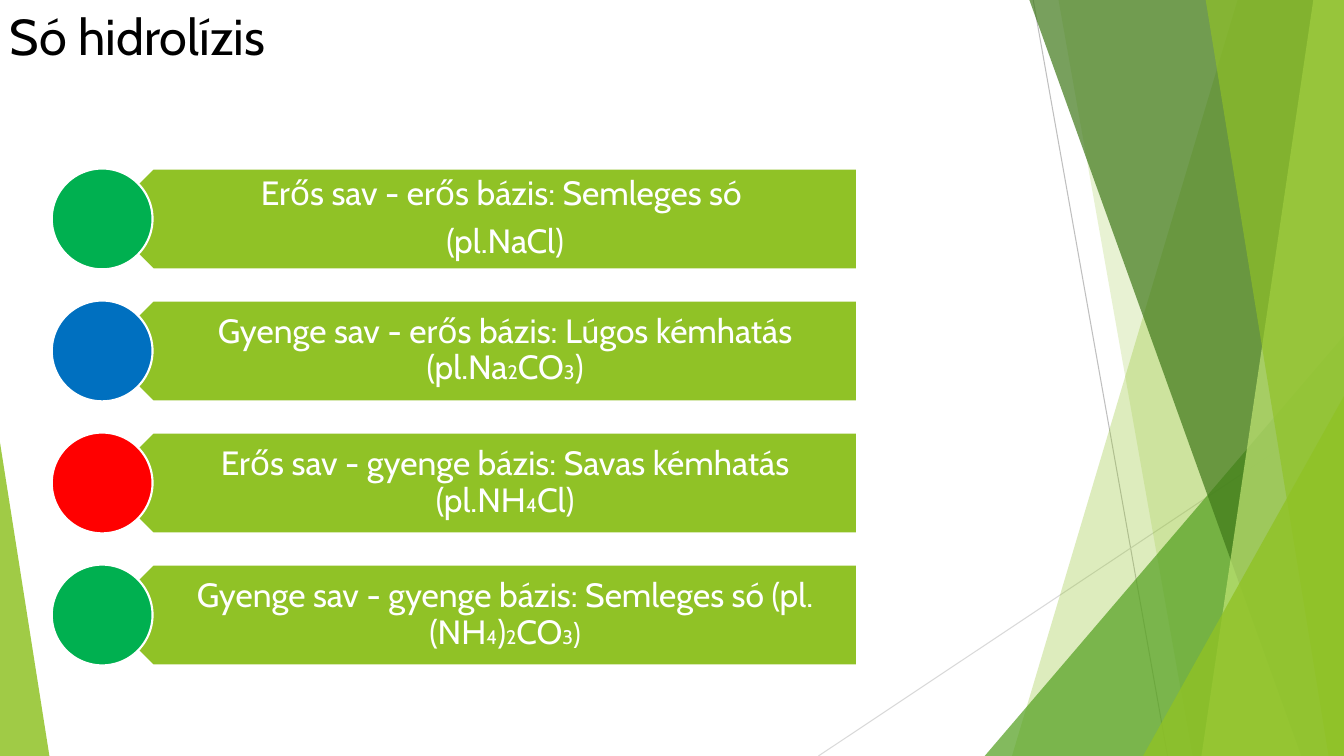
from lxml import etree
from pptx import Presentation
from pptx.dml.color import RGBColor
from pptx.enum.shapes import MSO_CONNECTOR, MSO_SHAPE
from pptx.enum.text import MSO_ANCHOR, PP_ALIGN
from pptx.oxml.ns import qn
from pptx.util import Pt

LINE = MSO_CONNECTOR.STRAIGHT
PLATE, OVAL, TRI = MSO_SHAPE.PENTAGON, MSO_SHAPE.OVAL, MSO_SHAPE.ISOSCELES_TRIANGLE
TOP, MID = MSO_ANCHOR.TOP, MSO_ANCHOR.MIDDLE
LEFT, MIDDLE = PP_ALIGN.LEFT, PP_ALIGN.CENTER
BLACK, WHITE = RGBColor(0, 0, 0), RGBColor(255, 255, 255)
LIME, LEAF = RGBColor(0x90, 0xC2, 0x26), RGBColor(0x54, 0xA0, 0x21)
MOSS, PALE = RGBColor(0x3F, 0x78, 0x19), RGBColor(0xC0, 0xE4, 0x74)
GREEN, BLUE = RGBColor(0, 0xB0, 0x50), RGBColor(0, 0x70, 0xC0)
RED = RGBColor(255, 0, 0)
GRAY, MIST = RGBColor(0xBF, 0xBF, 0xBF), RGBColor(0xD9, 0xD9, 0xD9)
WIDE, HIGH = 960, 540


class Deck:
    """Draws styled elements on one slide, with lengths in points."""

    font = "Cabin"
    small = 14

    def __init__(self):
        self.show = Presentation()
        self.show.slide_width, self.show.slide_height = Pt(WIDE), Pt(HIGH)
        self.slide = self.show.slides.add_slide(self.show.slide_layouts[6])
        self.shapes = self.slide.shapes

    def paint(self, shape, color, alpha=100, edge=None):
        shape.shadow.inherit = False
        shape.fill.solid()
        shape.fill.fore_color.rgb = color
        if alpha < 100:
            tone = shape.fill._xPr.find(".//" + qn("a:srgbClr"))
            etree.SubElement(tone, qn("a:alpha"), val=str(alpha * 1000))
        if edge is None:
            shape.line.fill.background()
        else:
            shape.line.color.rgb = edge
            shape.line.width = Pt(1.5)

    def line(self, start, end, color):
        wire = self.shapes.add_connector(LINE, *map(Pt, start + end))
        wire.line.color.rgb = color
        wire.line.width = Pt(0.75)
        etree.SubElement(wire._element.spPr, qn("a:effectLst"))

    def band(self, top, base, color, alpha):
        rim = -0.6
        form = self.shapes.build_freeform(Pt(top), Pt(rim))
        ends = [(WIDE, rim), (WIDE, HIGH), (base, HIGH)]
        form.add_line_segments([(Pt(x), Pt(y)) for x, y in ends])
        self.paint(form.convert_to_shape(), color, alpha)

    def shape(self, kind, box, color, turn=0, tip=None, **look):
        item = self.shapes.add_shape(kind, *map(Pt, box))
        item.rotation = turn
        if tip is not None:
            item.adjustments[0] = tip
        self.paint(item, color, **look)

    def text(self, box, lines, size, color, last=None, frame=None, para=None):
        body = self.shapes.add_textbox(*map(Pt, box)).text_frame
        for key, val in {"word_wrap": True, **(frame or {})}.items():
            setattr(body, key, val)
        for i, words in enumerate(lines):
            part = body.add_paragraph() if i else body.paragraphs[0]
            for key, val in (para or {}).items():
                setattr(part, key, val)
            bits = words.split("_")
            for j, bit in enumerate(bits):
                run = part.add_run()
                run.text = bit
                full = last if last and j == len(bits) - 1 else size
                look = {"name": self.font, "size": Pt(self.small if j % 2 else full)}
                for key, val in look.items():
                    setattr(run.font, key, val)
                run.font.color.rgb = color


def main():
    deck = Deck()
    deck.line((738, 0), (834, HIGH), GRAY)
    deck.line((WIDE, 290), (584.6, HIGH), MIST)
    deck.band(884.2, 722.9, LIME, 30)
    deck.band(756, 851.8, LIME, 20)
    deck.shape(TRI, (703.4, 239.8, 256.6, 300.2), LEAF, tip=1, alpha=72)
    deck.band(735.1, 929.5, MOSS, 70)
    deck.band(938.2, 858.2, PALE, 70)
    deck.band(861.1, 949, LIME, 65)
    deck.shape(TRI, (816.5, 283, 143.5, 257), LIME, tip=1, alpha=80)
    deck.shape(TRI, (0, 316.1, 35.3, 223.9), LIME, tip=0, alpha=85)
    deck.text((0, 0, 676.8, 103.7), ["Só hidrolízis"], 36, BLACK,
              frame={"vertical_anchor": TOP}, para={"alignment": LEFT})

    rows = [
        (GREEN, ["Erős sav - erős bázis: Semleges só ", "(pl.NaCl)"], 24),
        (BLUE, ["Gyenge sav - erős bázis: Lúgos kémhatás (pl.Na_2_CO_3_)"], 24),
        (RED, ["Erős sav - gyenge bázis: Savas kémhatás (pl.NH_4_Cl)"], 24),
        (GREEN, ["Gyenge sav - gyenge bázis: Semleges só (pl.(NH_4_)_2_CO_3_)"], 21),
    ]
    frame = {"vertical_anchor": MID, "margin_left": Pt(31.7), "margin_right": Pt(13.7),
             "margin_top": Pt(7.2), "margin_bottom": Pt(7.2)}
    para = {"alignment": MIDDLE, "line_spacing": 0.9, "space_after": Pt(8.4)}
    side, step = 72, 94.3
    for i, (color, lines, last) in enumerate(rows):
        y = 120.4 + i * step
        deck.shape(PLATE, (73.2, y, 539, side), LIME, turn=180, edge=WHITE)
        deck.text((91.4, y, 520.8, side), lines, 24, WHITE, last, frame, para)
        deck.shape(OVAL, (37, y, side, side), color, edge=WHITE)
    deck.show.save("out.pptx")


if __name__ == "__main__":
    main()
